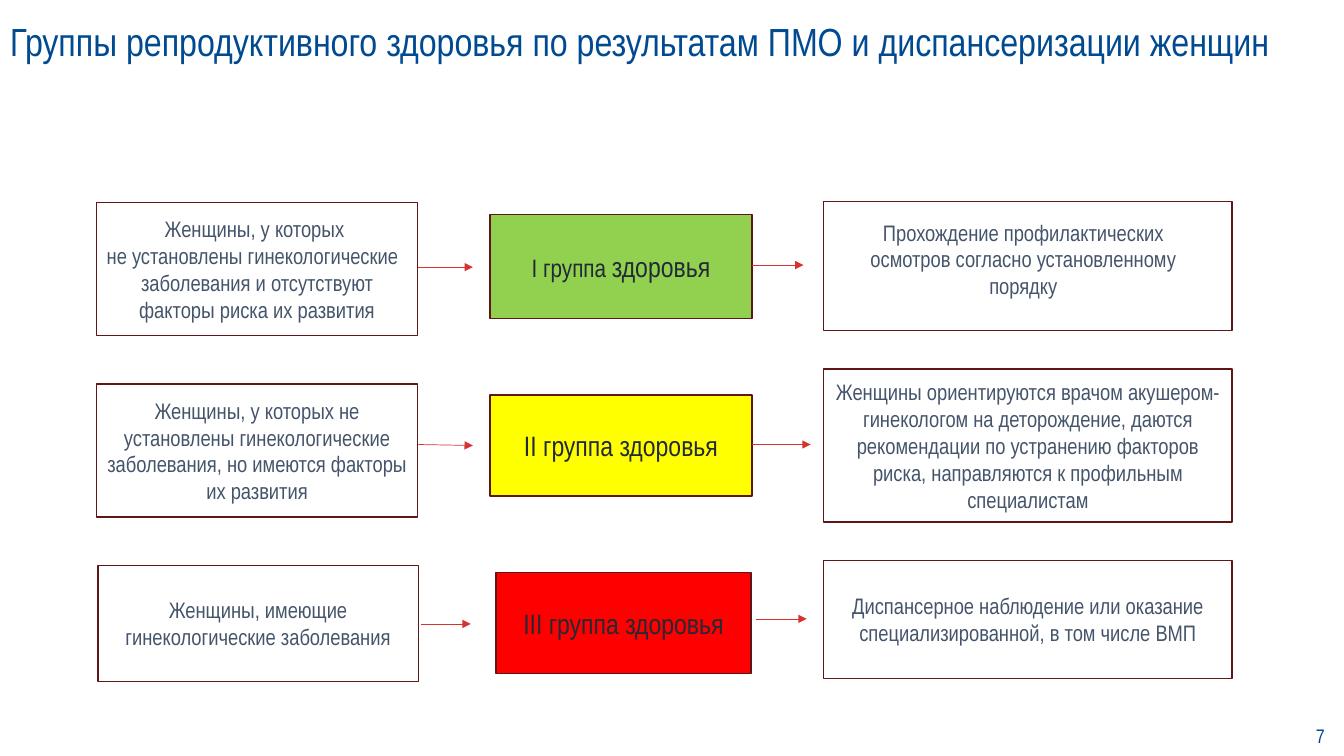
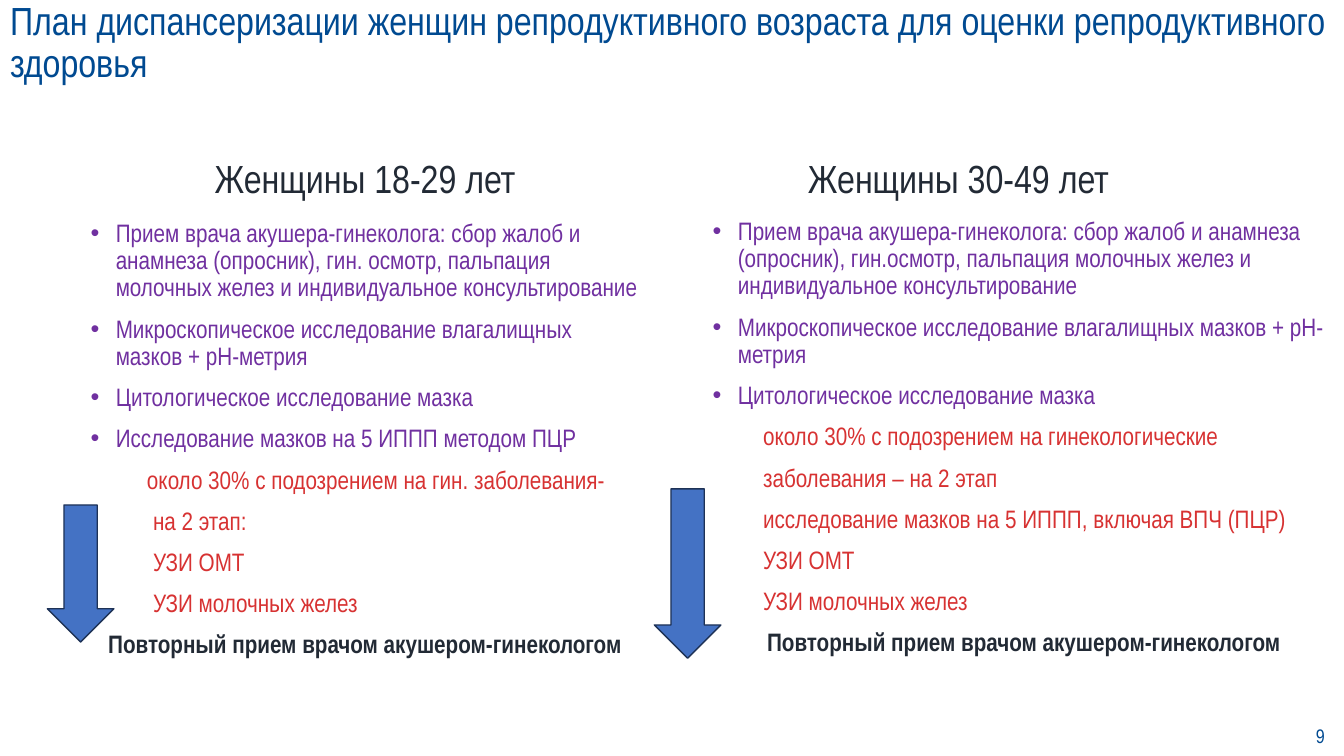
import pptx
import pptx.util
import pptx.dml.color
import pptx.enum.shapes
import pptx.enum.text
import pptx.oxml
import pptx.oxml.ns

PX = 9144  # 100 px to the inch
SLIDE_W, SLIDE_H = 1333, 750
FONT = "Arial Narrow"
COLORS = {
    "title": "004A91", "body": "44546A", "dark": "222A35", "frame": "5E1616",
    "red": "D73232", "purple": "7030A0", "white": "FFFFFF", "green": "92D050",
    "yellow": "FFFF00", "alarm": "FF0000", "blue": "4472C4", "navy": "1E3256",
}
ALIGN = pptx.enum.text.PP_ALIGN
ANCHOR = pptx.enum.text.MSO_ANCHOR
SHAPE = pptx.enum.shapes.MSO_SHAPE

GROUPS_TITLE = "Группы репродуктивного здоровья по результатам ПМО и диспансеризации женщин"
PLAN_TITLE = ("План диспансеризации женщин репродуктивного возраста "
              "для оценки репродуктивного здоровья")

# Boxes: (x, y, w, h); arrows: (x1, y1, x2, y2)
GROUPS = [
    {
        "women": ((96, 201, 318, 132), [
            ("Женщины, у которых ", ALIGN.CENTER),
            ("не установлены гинекологические", ALIGN.LEFT),
            ("заболевания и отсутствуют факторы риска их развития", ALIGN.CENTER)]),
        "group": ((486, 213, 260, 103), "green", [("I группа ", 18), ("здоровья", 20)]),
        "action": ((817, 200, 405, 128), []),
        "arrows": [(415, 265, 469, 265), (746, 263, 797, 263)],
    },
    {
        "women": ((96, 381, 318, 132), [
            ("Женщины, у которых не установлены гинекологические заболевания, "
             "но имеются факторы их развития", ALIGN.CENTER)]),
        "group": ((486, 392, 260, 100), "yellow", [("II группа здоровья", 20)]),
        "action": ((817, 366, 405, 152), [
            ("Женщины ориентируются врачом акушером-гинекологом на деторождение, "
             "даются рекомендации по устранению факторов риска, "
             "направляются к профильным специалистам", ALIGN.CENTER)]),
        "arrows": [(415, 441, 469, 442), (746, 441, 804, 441)],
    },
    {
        "women": ((97, 561, 318, 115), [
            ("Женщины, имеющие гинекологические заболевания", ALIGN.CENTER)]),
        "group": ((492, 568, 253, 100), "alarm", [("III группа здоровья", 20)]),
        "action": ((817, 556, 405, 117), [
            ("Диспансерное наблюдение или оказание специализированной, "
             "в том числе ВМП", ALIGN.CENTER)]),
        "arrows": [(418, 619, 467, 619), (750, 614, 800, 614)],
    },
]
CHECKUP_BOX = (835, 212, 360, 118)
CHECKUP_TEXT = [("Прохождение профилактических", ALIGN.CENTER),
                ("осмотров согласно установленному порядку", ALIGN.CENTER)]

SMEAR = "Микроскопическое исследование влагалищных мазков + рН-метрия"
CYTOLOGY = "Цитологическое исследование мазка"
REPEAT_VISIT = "Повторный прием врачом акушером-гинекологом"
# Second-stage lines carry their own indent in px
PLANS = [
    {
        "heading": ("Женщины 18-29 лет", (80, 153, 564, 59)),
        "box": (80, 214, 564, 403),
        "arrow": (47, 501, 66, 136),
        "first_stage": [
            "Прием врача акушера-гинеколога: сбор жалоб и анамнеза (опросник), гин. осмотр, "
            "пальпация молочных желез и индивидуальное консультирование",
            SMEAR, CYTOLOGY, "Исследование мазков на 5 ИППП методом ПЦР"],
        "second_stage": [
            ("около 30% с подозрением на гин. заболевания-", 56), ("на 2 этап:", 62),
            ("УЗИ ОМТ", 62), ("УЗИ молочных желез", 62)],
    },
    {
        "heading": ("Женщины 30-49 лет", (667, 153, 567, 59)),
        "box": (697, 212, 637, 403),
        "arrow": (649, 485, 66, 168),
        "first_stage": [
            "Прием врача акушера-гинеколога: сбор жалоб и анамнеза (опросник), гин.осмотр, "
            "пальпация молочных желез и индивидуальное консультирование",
            SMEAR, CYTOLOGY],
        "second_stage": [
            ("около 30% с подозрением на гинекологические", 50),
            ("заболевания – на 2 этап", 50),
            ("исследование мазков на 5 ИППП, включая ВПЧ (ПЦР)", 50),
            ("УЗИ ОМТ", 50), ("УЗИ молочных желез", 50)],
    },
]


def emu(box):
    return [pptx.util.Emu(v * PX) for v in box]


def rgb(name):
    return pptx.dml.color.RGBColor.from_string(COLORS[name])


def append_xml(parent, tag, attrs=""):
    ns = pptx.oxml.ns.nsdecls("a")
    parent.append(pptx.oxml.parse_xml(f"<a:{tag} {ns} {attrs}/>"))


def add_run(p, text, size, color, bold=False):
    r = p.add_run()
    r.text = text
    r.font.name = FONT
    r.font.size = pptx.util.Pt(size)
    r.font.bold = bold
    r.font.color.rgb = rgb(color)


def next_paragraph(tf):
    """Return the still empty first paragraph, or a new one."""
    return tf.add_paragraph() if tf.paragraphs[0].runs else tf.paragraphs[0]


def add_paragraph(tf, runs, color, align=ALIGN.LEFT, bold=False, spaced=False):
    p = next_paragraph(tf)
    p.alignment = align
    if spaced:
        p.line_spacing = 0.9
        p.space_before = pptx.util.Pt(10)
    for text, size in runs:
        add_run(p, text, size, color, bold)
    return p


def indent(p, left, first=0):
    pPr = p._p.get_or_add_pPr()
    pPr.set("marL", str(left * PX))
    pPr.set("indent", str(first * PX))
    return pPr


def add_text_box(s, box, anchor=ANCHOR.TOP):
    tf = s.shapes.add_textbox(*emu(box)).text_frame
    tf.word_wrap = True
    tf.vertical_anchor = anchor
    return tf


def add_shape(s, kind, box, fill, line):
    sp = s.shapes.add_shape(kind, *emu(box))
    sp.shadow.inherit = False
    sp.fill.solid()
    sp.fill.fore_color.rgb = rgb(fill)
    sp.line.color.rgb = rgb(line)
    sp.line.width = pptx.util.Pt(1)
    tf = sp.text_frame
    tf.word_wrap = True
    tf.vertical_anchor = ANCHOR.MIDDLE
    return tf


def add_arrow(s, ends):
    cx = s.shapes.add_connector(pptx.enum.shapes.MSO_CONNECTOR.STRAIGHT, *emu(ends))
    cx.line.color.rgb = rgb("red")
    cx.line.width = pptx.util.Pt(0.5)
    append_xml(cx.line._get_or_add_ln(), "tailEnd", 'type="triangle"')
    append_xml(cx._element.spPr, "effectLst")


def add_body(tf, paragraphs):
    for text, align in paragraphs:
        add_paragraph(tf, [(text, 16)], "body", align)


def add_slide(prs, title, number):
    """Add a slide with the shared title style and page number."""
    s = prs.slides.add_slide(prs.slide_layouts[5])
    sp = s.shapes.title
    sp.left, sp.top, sp.width, sp.height = emu((0, 0, SLIDE_W, 87))
    sp.text_frame.vertical_anchor = ANCHOR.MIDDLE
    p = add_paragraph(sp.text_frame, [(title, 28)], "title")
    p.line_spacing = 0.9
    tf = add_text_box(s, (1286, 710, 47, 40), ANCHOR.MIDDLE)
    add_paragraph(tf, [(str(number), 14)], "title", ALIGN.CENTER)
    return s


def build_groups(prs):
    s = add_slide(prs, GROUPS_TITLE, 7)
    for row in GROUPS:
        for key in ("women", "action"):
            box, paragraphs = row[key]
            add_body(add_shape(s, SHAPE.RECTANGLE, box, "white", "frame"), paragraphs)
        box, fill, runs = row["group"]
        tf = add_shape(s, SHAPE.RECTANGLE, box, fill, "frame")
        add_paragraph(tf, runs, "dark", ALIGN.CENTER)
        for ends in row["arrows"]:
            add_arrow(s, ends)
    add_body(add_text_box(s, CHECKUP_BOX), CHECKUP_TEXT)


def build_plan(prs):
    s = add_slide(prs, PLAN_TITLE, 9)
    for plan in PLANS:
        heading, box = plan["heading"]
        add_paragraph(add_text_box(s, box), [(heading, 28)], "dark", ALIGN.CENTER, spaced=True)
        tf = add_text_box(s, plan["box"])
        for text in plan["first_stage"]:
            pPr = indent(add_paragraph(tf, [(text, 18)], "purple", spaced=True), 25, -25)
            append_xml(pPr, "buFont", 'typeface="Arial"')
            append_xml(pPr, "buChar", 'char="•"')
        for text, left in plan["second_stage"]:
            indent(add_paragraph(tf, [(text, 18)], "red", spaced=True), left)
        add_paragraph(tf, [(REPEAT_VISIT, 18)], "dark", ALIGN.CENTER, bold=True, spaced=True)
        add_shape(s, SHAPE.DOWN_ARROW, plan["arrow"], "blue", "navy")


def main():
    prs = pptx.Presentation()
    prs.slide_width, prs.slide_height = emu((SLIDE_W, SLIDE_H))
    build_groups(prs)
    build_plan(prs)
    prs.save("out.pptx")


if __name__ == "__main__":
    main()
